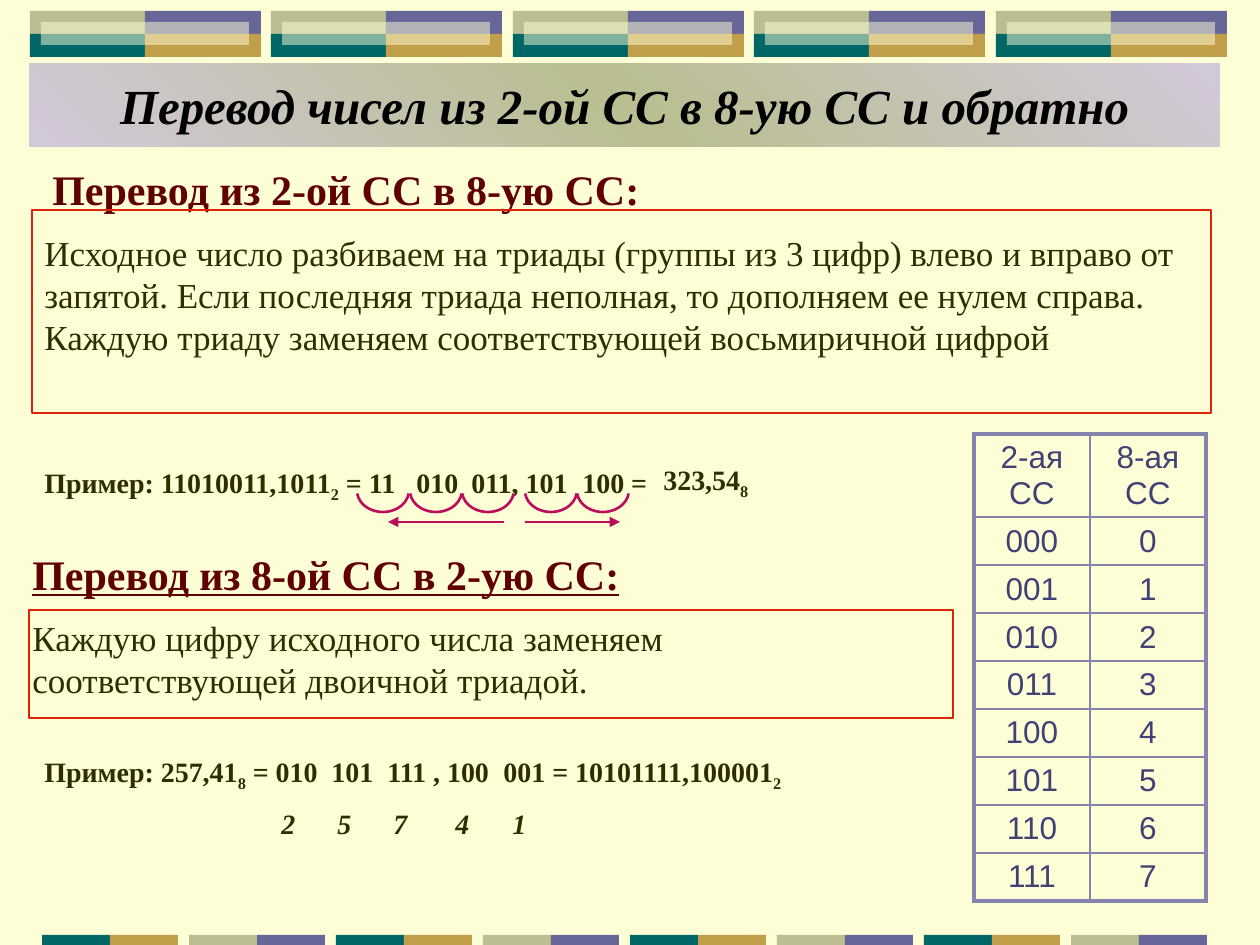
"""Build the slide on converting numbers between base 2 and base 8."""
from lxml.etree import SubElement
from copy import deepcopy
from pptx import Presentation
from pptx.dml.color import RGBColor
from pptx.enum.shapes import MSO_CONNECTOR as CONN, MSO_SHAPE as SHAPE
from pptx.enum.text import MSO_ANCHOR as ANCHOR, PP_ALIGN as ALIGN
from pptx.oxml.ns import qn
from pptx.util import Pt

PX = 914400 // 126
CREAM = RGBColor(0xFE, 0xFE, 0xD6)
SAGE = RGBColor(0xBA, 0xBE, 0x90)
VIOLET = RGBColor(0x66, 0x66, 0x99)
TEAL = RGBColor(0x00, 0x66, 0x66)
GOLD = RGBColor(0xC0, 0x9E, 0x4A)
LILAC = RGBColor(0xD2, 0xC8, 0xDA)
BLACK = RGBColor(0x00, 0x00, 0x00)
MAROON = RGBColor(0x60, 0x00, 0x00)
OLIVE = RGBColor(0x2E, 0x2E, 0x01)
RED = RGBColor(0xDE, 0x23, 0x0A)
PINK = RGBColor(0xBB, 0x0D, 0x5C)
NAVY = RGBColor(0x40, 0x41, 0x76)
BORDER = RGBColor(0x83, 0x83, 0xAD)

SERIF = "Times New Roman"
TITLE = {"name": SERIF, "size": Pt(28), "bold": True, "italic": True}
HEADING = {"name": SERIF, "size": Pt(24), "bold": True, "underline": True}
BODY = {"name": SERIF, "size": Pt(20)}
EXAMPLE = {"name": SERIF, "size": Pt(16), "bold": True}
CELL = {"name": "Arial", "size": Pt(18)}


def add_box(kind, left, top, width, height, fill=None, line=None, weight=0.75):
    sp = s.shapes.add_shape(kind, left * PX, top * PX, width * PX, height * PX)
    sp.shadow.inherit = False
    if fill is None:
        sp.fill.background()
    else:
        sp.fill.solid()
        sp.fill.fore_color.rgb = fill
    if line is None:
        sp.line.fill.background()
    else:
        sp.line.color.rgb = line
        sp.line.width = Pt(weight)
    return sp


def write(p, runs, fmt, color, tabs=(), indent=0):
    pPr = p._p.get_or_add_pPr()
    if indent:
        pPr.set("marL", str(indent * PX))
        pPr.set("indent", "0")
    if tabs:
        tab_list = SubElement(pPr, qn("a:tabLst"))
        for pos in tabs:
            SubElement(tab_list, qn("a:tab"), pos=str(pos * PX), algn="l")
    for i, text in enumerate(runs):
        r = p.add_run()
        r.text = text
        for key, value in fmt.items():
            setattr(r.font, key, value)
        r.font.color.rgb = color
        if i % 2:
            r._r.get_or_add_rPr().set("baseline", "-25000")


prs = Presentation()
prs.slide_width, prs.slide_height = 1260 * PX, 945 * PX
s = prs.slides.add_slide(prs.slide_layouts[6])
s.background.fill.solid()
s.background.fill.fore_color.rgb = CREAM

for i in range(5):
    left = 30 + 483 * i // 2
    for j, color in enumerate((SAGE, VIOLET, TEAL, GOLD)):
        add_box(SHAPE.RECTANGLE, left + j % 2 * 115, 11 + j // 2 * 23, 116, 23, color)
    sp = add_box(SHAPE.RECTANGLE, left + 11, 22, 208, 23, CREAM)
    clr = sp._element.spPr.find(qn("a:solidFill"))[0]
    SubElement(clr, qn("a:alpha"), val="50000")

for i in range(8):
    for j, color in enumerate((SAGE, VIOLET) if i % 2 else (TEAL, GOLD)):
        add_box(SHAPE.RECTANGLE, 42 + 147 * i + 68 * j, 935, 68, 10, color)

sp = add_box(SHAPE.RECTANGLE, 29, 63, 1191, 84)
sp.fill.gradient()
sp.fill.gradient_angle = 45
stops = sp.fill._fill._gradFill.gsLst
stops.append(deepcopy(stops[-1]))
for stop, color, pos in zip(sp.fill.gradient_stops, (LILAC, SAGE, LILAC), (0, 0.5, 1)):
    stop.color.rgb = color
    stop.position = pos
tf = sp.text_frame
tf.vertical_anchor = ANCHOR.MIDDLE
tf.paragraphs[0].alignment = ALIGN.CENTER
write(tf.paragraphs[0], ["Перевод чисел из 2-ой СС в 8-ую СС и обратно"], TITLE, BLACK)

rows = [("2-ая СС", "8-ая СС")] + [(f"{n:03b}", str(n)) for n in range(8)]
table = s.shapes.add_table(9, 2, 974 * PX, 434 * PX, 232 * PX, 467 * PX).table
table.first_row = table.horz_banding = False
for col in table.columns:
    col.width = 116 * PX
for i, row in enumerate(rows):
    table.rows[i].height = (48 if i else 83) * PX
    for j, text in enumerate(row):
        cell = table.cell(i, j)
        tcPr = cell._tc.get_or_add_tcPr()
        outer = {"L": j == 0, "R": j == 1, "T": i == 0, "B": i == 8}
        for side, thick in outer.items():
            ln = SubElement(tcPr, qn(f"a:ln{side}"), w=str(Pt(2.25 if thick else 1)))
            fill = SubElement(ln, qn("a:solidFill"))
            SubElement(fill, qn("a:srgbClr"), val=str(BORDER))
        cell.fill.background()
        p = cell.text_frame.paragraphs[0]
        p.alignment = ALIGN.CENTER
        write(p, [text], CELL, NAVY)

texts = [
    (32, 157, 1189, 212, [
        (["Перевод из 2-ой СС в 8-ую СС:"], HEADING, MAROON, (), 8),
        (["Исходное число разбиваем на триады (группы из 3 цифр) влево и вправо "
          "от запятой. Если последняя триада неполная, то дополняем ее нулем справа. "
          "Каждую триаду заменяем соответствующей восьмиричной цифрой"], BODY, OLIVE)]),
    (20, 542, 924, 170, [
        (["Перевод из 8-ой СС в 2-ую СС:"], HEADING, MAROON),
        (["Каждую цифру исходного числа заменяем соответствующей двоичной триадой."],
         BODY, OLIVE)]),
    (32, 459, 766, 47, [
        (["Пример: 11010011,1011", "2", " = 11\t010\t011, 101\t100 ="],
         EXAMPLE, OLIVE, (372, 427, 538))]),
    (651, 456, 126, 47, [(["323,54", "8"], EXAMPLE, OLIVE)]),
    (32, 748, 788, 97, [
        (["Пример: 257,41", "8", " = 010\t101\t111 , 100\t001 = 10101111,100001", "2"],
         EXAMPLE, OLIVE, (287, 343, 459)),
        (["\t2\t5\t7\t4\t1"], {**EXAMPLE, "italic": True}, OLIVE,
         (237, 293, 349, 411, 468))]),
]
for left, top, width, height, paras in texts:
    tf = s.shapes.add_textbox(left * PX, top * PX, width * PX, height * PX).text_frame
    tf.word_wrap = True
    for i, para in enumerate(paras):
        p = tf.add_paragraph() if i else tf.paragraphs[0]
        if i:
            p.space_before = Pt(para[1]["size"].pt / 2)
        write(p, *para)

for left in (357, 410, 462, 525, 577):
    sp = add_box(SHAPE.ARC, left, 469, 52, 43, line=PINK, weight=1.5)
    sp.adjustments[0], sp.adjustments[1] = 4, 104

for start, end in ((504, 388), (525, 620)):
    ln = s.shapes.add_connector(CONN.STRAIGHT, start * PX, 522 * PX, end * PX, 522 * PX)
    ln.line.color.rgb = PINK
    ln.line.width = Pt(1)
    SubElement(ln.line._get_or_add_ln(), qn("a:tailEnd"), type="triangle")
    SubElement(ln._element.spPr, qn("a:effectLst"))

for left, top, width, height in ((32, 210, 1179, 203), (29, 610, 924, 108)):
    add_box(SHAPE.RECTANGLE, left, top, width, height, line=RED)

prs.save("out.pptx")
